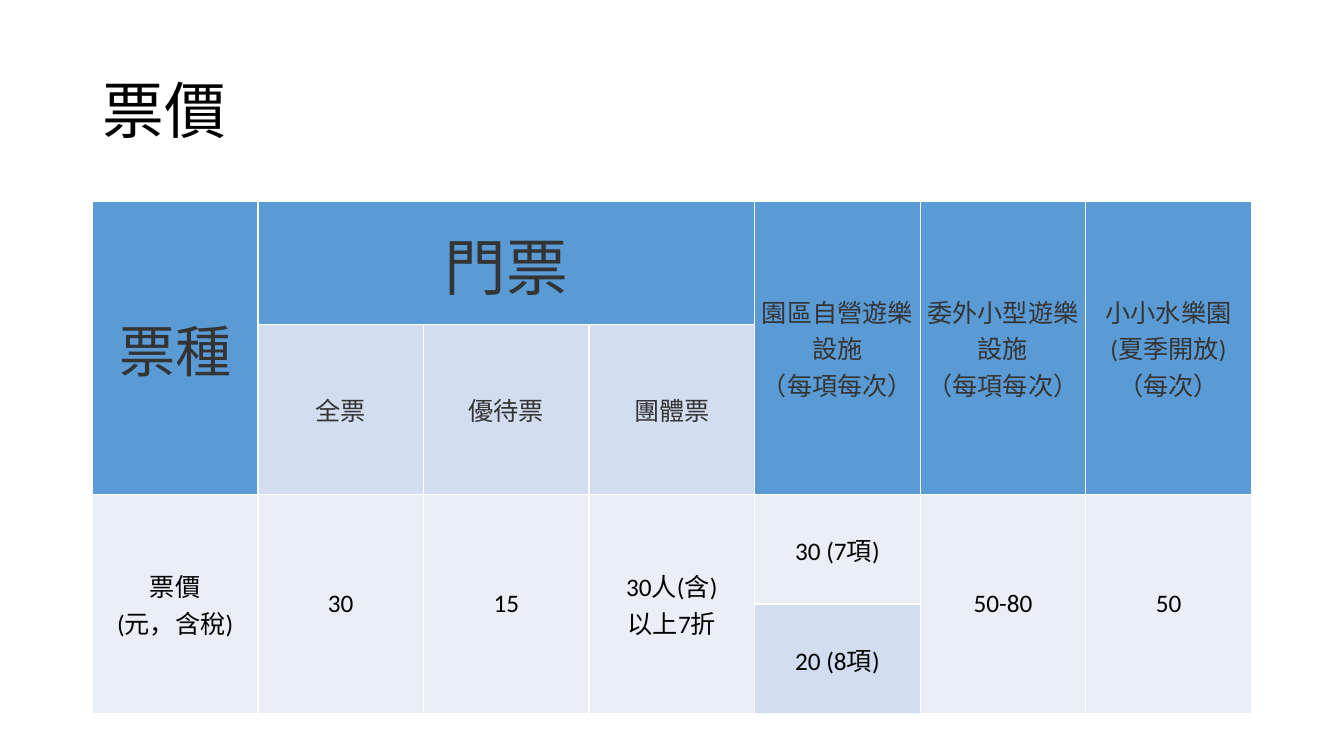
"""Build the ticket price slide with its merged price table."""
from dataclasses import dataclass

from lxml.etree import SubElement
from pptx import Presentation
from pptx.dml.color import RGBColor
from pptx.enum.text import MSO_ANCHOR, PP_ALIGN
from pptx.oxml.ns import qn
from pptx.slide import Slide
from pptx.table import Table, _Cell
from pptx.text.text import _Paragraph
from pptx.util import Pt

FONT = "Calibri"
BLACK, GREY, WHITE = "000000", "343434", "FFFFFF"
HEADER, BAND, PALE = "5B9BD5", "D2DEEF", "EAEFF7"
LEFT, WIDTH = 66, 828
COLUMN_COUNT = 7
ROW_HEIGHTS = (88, 121, 78.5, 78.5)


@dataclass(frozen=True)
class Entry:
    row: int
    column: int
    text: str
    fill: str
    color: str = BLACK
    size: float = 18
    rows: int = 1
    columns: int = 1


ENTRIES = (
    Entry(0, 0, "票種", HEADER, GREY, 40, rows=2),
    Entry(0, 1, "門票", HEADER, GREY, 44, columns=3),
    Entry(0, 4, "園區自營遊樂設施\n（每項每次）", HEADER, GREY, rows=2),
    Entry(0, 5, "委外小型遊樂設施\n（每項每次）", HEADER, GREY, rows=2),
    Entry(0, 6, "小小水樂園\n(夏季開放)\n（每次）", HEADER, GREY, rows=2),
    Entry(1, 1, "全票", BAND, GREY),
    Entry(1, 2, "優待票", BAND, GREY),
    Entry(1, 3, "團體票", BAND, GREY),
    Entry(2, 0, "票價\n(元，含稅)", PALE, rows=2),
    Entry(2, 1, "30", PALE, rows=2),
    Entry(2, 2, "15", PALE, rows=2),
    Entry(2, 3, "30人(含)\n以上7折", PALE, rows=2),
    Entry(2, 4, "30 (7項)", PALE),
    Entry(2, 5, "50-80", PALE, rows=2),
    Entry(2, 6, "50", PALE, rows=2),
    Entry(3, 4, "20 (8項)", BAND),
)


def rgb(color: str) -> RGBColor:
    """Turn a hex string into a colour."""
    return RGBColor.from_string(color)


def write(para: _Paragraph, text: str, size: float, color: str, align: PP_ALIGN) -> None:
    """Fill a paragraph with text in one font."""
    para.text = text
    para.alignment = align
    para.font.name = FONT
    para.font.size = Pt(size)
    para.font.bold = False
    para.font.color.rgb = rgb(color)


def add_borders(cell: _Cell) -> None:
    """Draw thin white lines on all four sides of a cell."""
    properties = cell._tc.get_or_add_tcPr()
    for index, side in enumerate(("lnL", "lnR", "lnT", "lnB")):
        line = SubElement(properties, qn(f"a:{side}"), w=str(Pt(1)))
        fill = SubElement(line, qn("a:solidFill"))
        SubElement(fill, qn("a:srgbClr"), val=WHITE)
        properties.insert(index, line)


def draw_entry(table: Table, entry: Entry) -> None:
    """Merge, fill and write one entry of the table."""
    cell = table.cell(entry.row, entry.column)
    if entry.rows > 1 or entry.columns > 1:
        cell.merge(table.cell(entry.row + entry.rows - 1, entry.column + entry.columns - 1))
    cell.fill.solid()
    cell.fill.fore_color.rgb = rgb(entry.fill)
    cell.vertical_anchor = MSO_ANCHOR.MIDDLE
    cell.margin_left = cell.margin_right = cell.margin_top = cell.margin_bottom = Pt(2)
    write(cell.text_frame.paragraphs[0], entry.text, entry.size, entry.color, PP_ALIGN.CENTER)


def add_title(page: Slide) -> None:
    """Place and format the title."""
    title = page.shapes.title
    title.left, title.top, title.width, title.height = Pt(LEFT), Pt(29), Pt(WIDTH), Pt(104)
    title.text_frame.vertical_anchor = MSO_ANCHOR.MIDDLE
    para = title.text_frame.paragraphs[0]
    write(para, "票價", 44, BLACK, PP_ALIGN.LEFT)
    para.line_spacing = 0.9


def add_prices(page: Slide) -> None:
    """Add the price table."""
    frame = page.shapes.add_table(len(ROW_HEIGHTS), COLUMN_COUNT, Pt(LEFT), Pt(144),
                                  Pt(WIDTH), Pt(sum(ROW_HEIGHTS)))
    table = frame.table
    table.first_row = table.horz_banding = False
    for row, height in zip(table.rows, ROW_HEIGHTS):
        row.height = Pt(height)
    for entry in ENTRIES:
        draw_entry(table, entry)
    for cell in table.iter_cells():
        add_borders(cell)


def main() -> None:
    """Build and save the deck."""
    deck = Presentation()
    deck.slide_width, deck.slide_height = Pt(960), Pt(540)
    page = deck.slides.add_slide(deck.slide_layouts[5])
    add_title(page)
    add_prices(page)
    deck.save("out.pptx")


if __name__ == "__main__":
    main()
